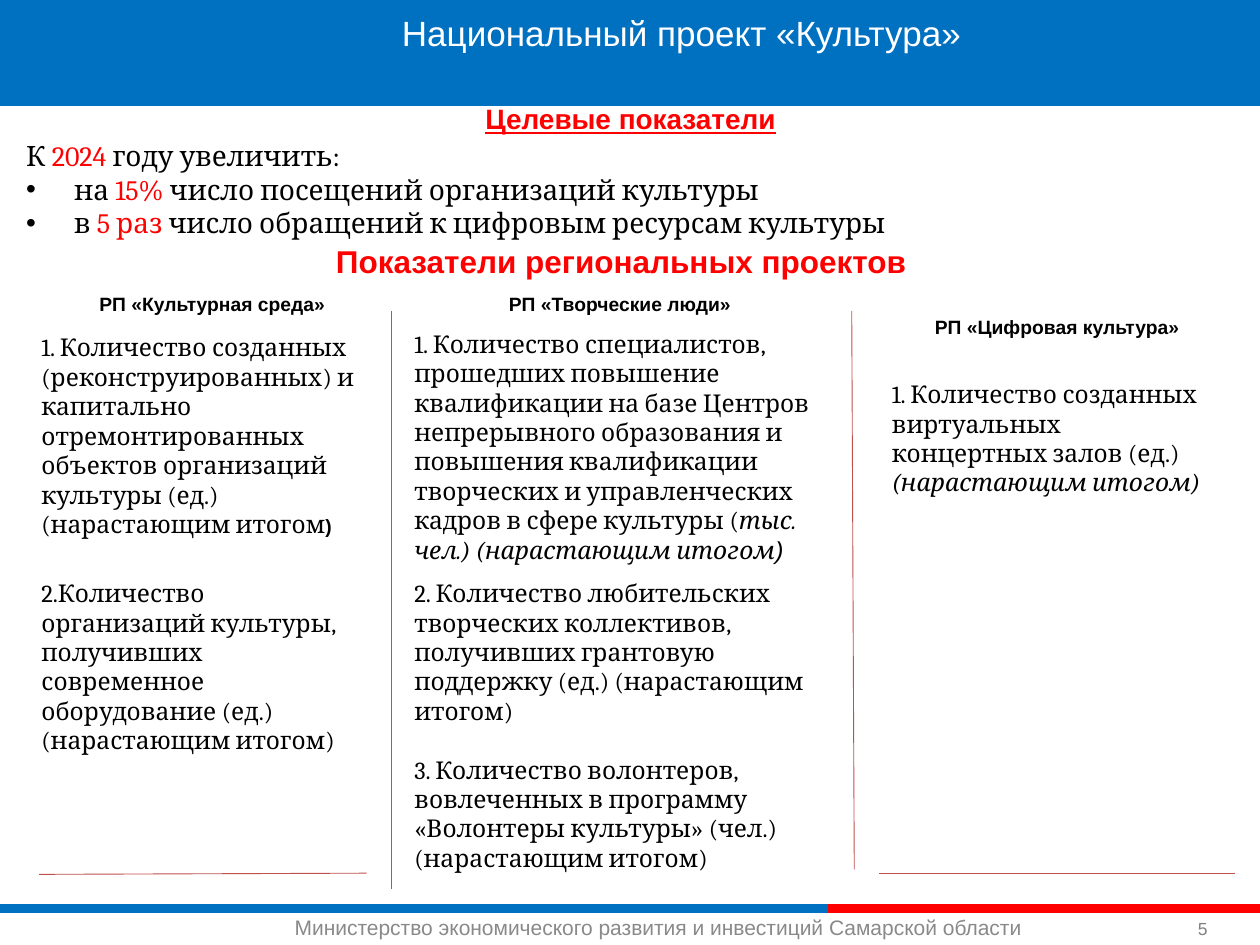
from dataclasses import dataclass
from lxml.etree import SubElement
from pptx import Presentation
from pptx.dml.color import RGBColor
from pptx.enum.shapes import MSO_CONNECTOR, MSO_SHAPE
from pptx.enum.text import MSO_ANCHOR, MSO_AUTO_SIZE, PP_ALIGN
from pptx.oxml.ns import qn
from pptx.util import Inches, Pt


@dataclass(frozen=True)
class Theme:
    blue: str = "0070C1"
    red: str = "FF0000"
    rule: str = "C0504D"
    black: str = "000000"
    white: str = "FFFFFF"
    gray: str = "898989"
    page: str = "808080"
    sans: str = "Arial"
    serif: str = "Cambria"
    title: int = 20
    region: int = 18
    goal: int = 16
    body: int = 14
    foot: int = 12
    small: int = 11
    num: int = 10


T = Theme()
WIDE, HIGH = Inches(10), Inches(7.5)

# Content: a paragraph is a list of (text, changes to the base style)
TITLE = "Национальный проект «Культура»"
RED = {"color": T.red}
ITAL = {"italic": True}
GOALS = [
    [("К ", {}), ("2024", RED), (" году увеличить:", {})],
    [("на ", {}), ("15%", RED), (" число посещений организаций культуры", {})],
    [("в ", {}), ("5 раз ", RED), ("число обращений к цифровым ресурсам культуры", {})],
]
# Places are left, top, width, height in percent of the slide
COLUMNS = [
    {"head": "РП «Культурная среда»", "at": (2.3, 30.27, 29.1, 3.87), "items": [
        ((2.3, 34.53, 28.5, 23.33), [[
            ("1. Количество созданных (реконструированных) и капитально отремонтированных "
             "объектов организаций культуры (ед.) (нарастающим итогом", {}),
            (")", {"size": T.small, "font": T.sans, "bold": True})]]),
        ((2.3, 60.53, 26.8, 17.07), [[
            ("2.Количество организаций культуры, получивших современное "
             "оборудование (ед.) (нарастающим итогом)", {})]]),
    ]},
    {"head": "РП «Творческие люди»", "at": (31.4, 30.27, 35.6, 3.87), "items": [
        ((31.9, 34.13, 35.1, 26.53), [[
            ("1. Количество специалистов, прошедших повышение квалификации на базе Центров "
             "непрерывного образования и повышения квалификации творческих и управленческих "
             "кадров в сфере культуры (", {}),
            ("тыс. чел.) (нарастающим итогом", ITAL),
            (")", {"italic": True, "font": T.sans})]]),
        ((31.9, 60.53, 33.8, 32.8), [
            [("2. Количество любительских творческих коллективов, получивших грантовую "
              "поддержку (ед.) (нарастающим итогом)", {})],
            [("3. Количество волонтеров, вовлеченных в программу «Волонтеры культуры» "
              "(чел.) (нарастающим итогом)", {})]]),
    ]},
    {"head": "РП «Цифровая культура»", "at": (67.8, 32.67, 32.2, 3.87), "items": [
        ((69.8, 39.47, 28.1, 13.87), [[
            ("1. Количество созданных виртуальных концертных залов (ед.) ", {}),
            ("(нарастающим итогом)", ITAL)]]),
    ]},
]
# Single-line texts: text, place, style, alignment
LABELS = [
    ("Целевые показатели", (0.7, 10.13, 98.7, 4.93),
     {"size": T.goal, "color": T.red, "bold": True, "underline": True}, PP_ALIGN.CENTER),
    ("Показатели региональных проектов", (24.2, 24.93, 50.2, 5.33),
     {"size": T.region, "color": T.red, "bold": True}, PP_ALIGN.CENTER),
    ("Министерство экономического развития и инвестиций Самарской области",
     (22.4, 96.13, 65.4, 4), {"size": T.foot, "color": T.gray}, PP_ALIGN.LEFT),
]
# Lines: start x, start y, end x, end y, colour, width
LINES = [
    (0, 96.13, 65.7, 96.13, T.blue, 5),
    (65.7, 96.13, 100, 96.13, T.red, 5),
    (31.1, 32.93, 31.1, 94.13, T.rule, 0.5),
    (67.6, 32.93, 67.8, 92, T.rule, 0.5),
    (29.1, 92.4, 3.1, 92.53, T.rule, 0.5),
    (98, 92.4, 69.8, 92.4, T.rule, 0.5),
]


def scale(spot):
    """Turn alternating x and y percents into slide lengths."""
    return [int(v * (HIGH if i % 2 else WIDE) / 100) for i, v in enumerate(spot)]


def style(run, size=T.small, font=T.sans, color=T.black, **flags):
    run.font.size, run.font.name = Pt(size), font
    run.font.color.rgb = RGBColor.from_string(color)
    for key, val in flags.items():
        setattr(run.font, key, val)


def write(slide, spot, paras, base, align=PP_ALIGN.LEFT, gap=0):
    box = slide.shapes.add_textbox(*scale(spot))
    frame = box.text_frame
    frame.word_wrap = True
    for i, runs in enumerate(paras):
        para = frame.add_paragraph() if i else frame.paragraphs[0]
        para.alignment = align
        if i and gap:
            para.space_before = Pt(gap)
        for text, change in runs:
            run = para.add_run()
            run.text = text
            style(run, **{**base, **change})
    return frame


def bullet(para):
    props = para._p.get_or_add_pPr()
    props.set("marL", str(Inches(0.38)))
    props.set("indent", str(-Inches(0.38)))
    SubElement(props, qn("a:buFont")).set("typeface", T.sans)
    SubElement(props, qn("a:buChar")).set("char", "•")


def main():
    deck = Presentation()
    deck.slide_width, deck.slide_height = WIDE, HIGH
    slide = deck.slides.add_slide(deck.slide_layouts[5])

    # Header band and title
    band = slide.shapes.add_shape(MSO_SHAPE.RECTANGLE, *scale((0, 0, 100, 11.2)))
    band.shadow.inherit = False
    band.fill.solid()
    band.fill.fore_color.rgb = RGBColor.from_string(T.blue)
    band.line.fill.background()
    head = slide.shapes.title
    head.element.getparent().append(head.element)
    head.left, head.top, head.width, head.height = scale((8.5, 0.53, 91.2, 5.87))
    frame = head.text_frame
    frame.text = TITLE
    frame.auto_size = MSO_AUTO_SIZE.NONE
    frame.vertical_anchor = MSO_ANCHOR.TOP
    frame.paragraphs[0].alignment = PP_ALIGN.CENTER
    style(frame.paragraphs[0].runs[0], T.title, color=T.white)

    # Rules
    for *ends, color, width in LINES:
        line = slide.shapes.add_connector(MSO_CONNECTOR.STRAIGHT, *scale(ends))
        line.line.color.rgb = RGBColor.from_string(color)
        line.line.width = Pt(width)
        SubElement(line.element.spPr, qn("a:effectLst"))

    # Headings, footer and page number
    for text, spot, base, align in LABELS:
        write(slide, spot, [[(text, {})]], base, align)
    page = write(slide, (94.1, 94.67, 5.6, 5.33), [[("5", {})]],
                 {"size": T.num, "color": T.page})
    page.vertical_anchor = MSO_ANCHOR.BOTTOM

    # Goals
    goals = write(slide, (1.1, 14, 96.8, 12.13), GOALS, {"size": T.goal, "font": T.serif})
    for para in goals.paragraphs[1:]:
        bullet(para)

    # Project columns
    for col in COLUMNS:
        write(slide, col["at"], [[(col["head"], {})]], {"bold": True}, PP_ALIGN.CENTER)
        for spot, paras in col["items"]:
            write(slide, spot, paras, {"size": T.body, "font": T.serif}, gap=16.8)

    deck.save("out.pptx")


if __name__ == "__main__":
    main()
